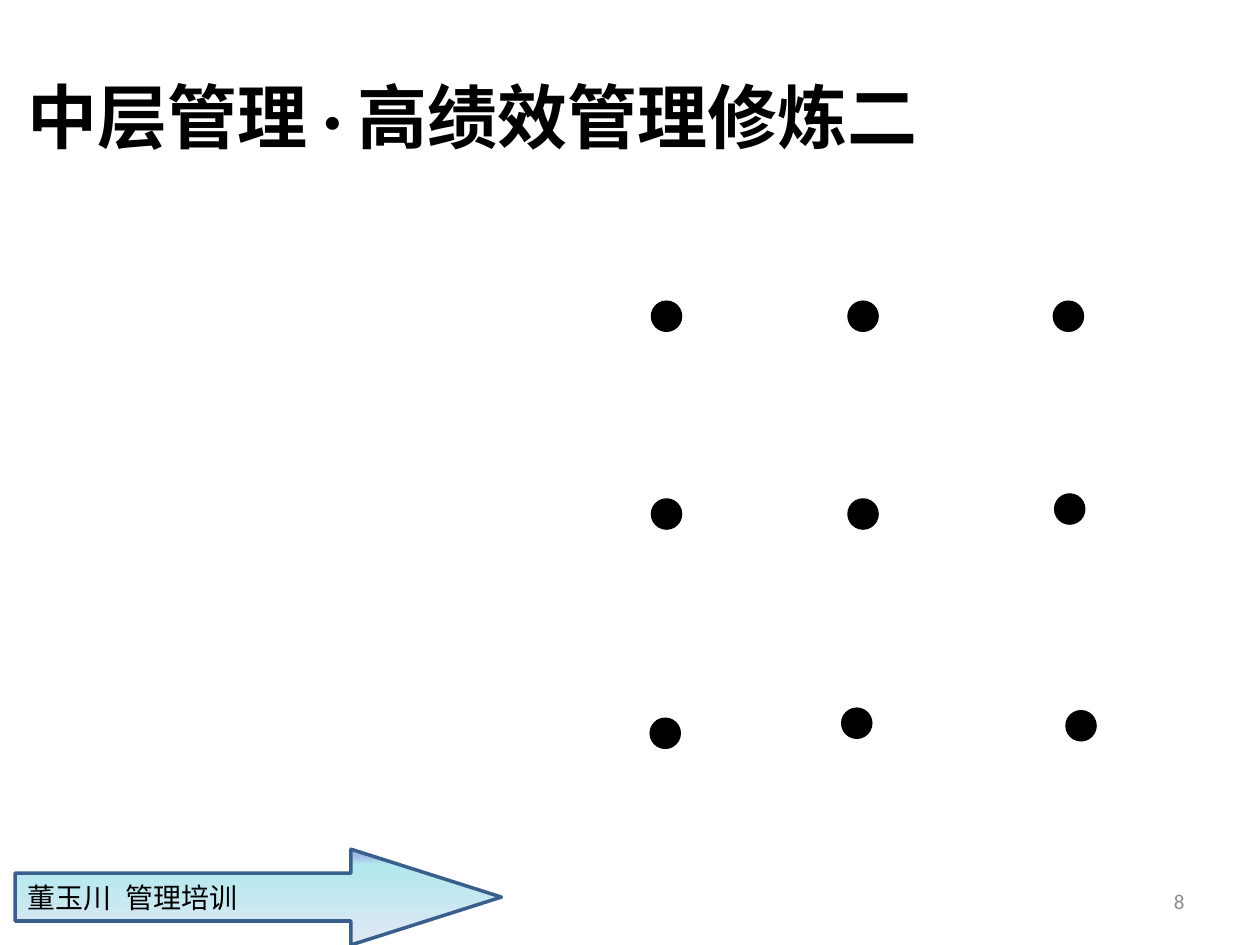
from lxml.etree import SubElement
from pptx import Presentation
from pptx.dml.color import RGBColor
from pptx.enum.shapes import MSO_SHAPE as Shape
from pptx.enum.text import MSO_ANCHOR as Anchor, PP_ALIGN as Align
from pptx.oxml.ns import qn
from pptx.util import Inches, Pt

# Content
TITLE = "中层管理 · 高绩效管理修炼二"
TRAINER = ("董玉川", " ", "管理培训")
PAGE_NUMBER = "8"
DOT_SIZE = 0.24
DOT_ROWS = [  # left, top of the nine hand-placed dots
    [(5.17, 2.39), (6.73, 2.39), (8.36, 2.39)],
    [(5.17, 3.96), (6.73, 3.96), (8.37, 3.92)],
    [(5.16, 5.70), (6.68, 5.62), (8.46, 5.64)],
]
COLORS = {"ink": "000000", "number": "8C8C8C", "arrow line": "3A5F8C"}
ARROW_STOPS = [(0, "9AB5E4"), (4, "A0B9E5"), (7, "A2BBE6"),
               (16, "B2E8EE"), (100, "E1E8F5")]


def color(name):
    return RGBColor.from_string(COLORS[name])


def add_shape(page, kind, place, line_color, line_width):
    shape = page.shapes.add_shape(kind, *map(Inches, place))
    shape.shadow.inherit = False
    shape.line.color.rgb = color(line_color)
    shape.line.width = Pt(line_width)
    return shape


def add_text_box(page, place, text):
    box = page.shapes.add_textbox(*map(Inches, place))
    box.text_frame.text = text
    box.text_frame.word_wrap = True
    box.text_frame.vertical_anchor = Anchor.MIDDLE
    return box.text_frame.paragraphs[0]


def style(span, font, size, ink="ink", bold=False):
    span.font.name = font
    span.font.size = Pt(size)
    span.font.bold = bold
    span.font.color.rgb = color(ink)


def hang(para):
    props = para._p.get_or_add_pPr()
    props.set("marL", str(Inches(0.38)))
    props.set("indent", str(-Inches(0.38)))


def fill_gradient(shape, stops):
    shape.fill.gradient()
    shape.fill.gradient_angle = 270  # top to bottom
    stop_list = shape.element.spPr.find(qn("a:gradFill")).find(qn("a:gsLst"))
    for stop in list(stop_list):
        stop_list.remove(stop)
    for percent, value in stops:
        stop = SubElement(stop_list, qn("a:gs"), pos=str(percent * 1000))
        SubElement(stop, qn("a:srgbClr"), val=value)


deck = Presentation()
deck.slide_width, deck.slide_height = Inches(10), Inches(7.5)
page = deck.slides.add_slide(deck.slide_layouts[6])

# Trainer arrow
arrow = add_shape(page, Shape.RIGHT_ARROW, (0.12, 6.74, 3.86, 0.76), "arrow line", 2)
arrow.adjustments[0], arrow.adjustments[1] = 0.5, 1.571
fill_gradient(arrow, ARROW_STOPS)
arrow.text_frame.vertical_anchor = Anchor.MIDDLE
para = arrow.text_frame.paragraphs[0]
para.alignment = Align.LEFT
hang(para)
for part in TRAINER:
    span = para.add_run()
    span.text = part
    style(span, "Arial", 16)
    if part == " ":  # widen the gap between name and subject
        span.font._element.set("spc", "450")

# Page number
para = add_text_box(page, (8.94, 6.95, 0.56, 0.4), PAGE_NUMBER)
para.alignment = Align.RIGHT
style(para.runs[0], "Calibri", 12, "number")

# Nine dots
for row in DOT_ROWS:
    for left, top in row:
        dot = add_shape(page, Shape.FLOWCHART_CONNECTOR,
                        (left, top, DOT_SIZE, DOT_SIZE), "ink", 0.75)
        dot.fill.solid()
        dot.fill.fore_color.rgb = color("ink")

# Title
para = add_text_box(page, (0.12, 0.29, 7.8, 1.25), TITLE)
hang(para)
style(para.runs[0], "Calibri", 40, bold=True)

deck.save("out.pptx")
